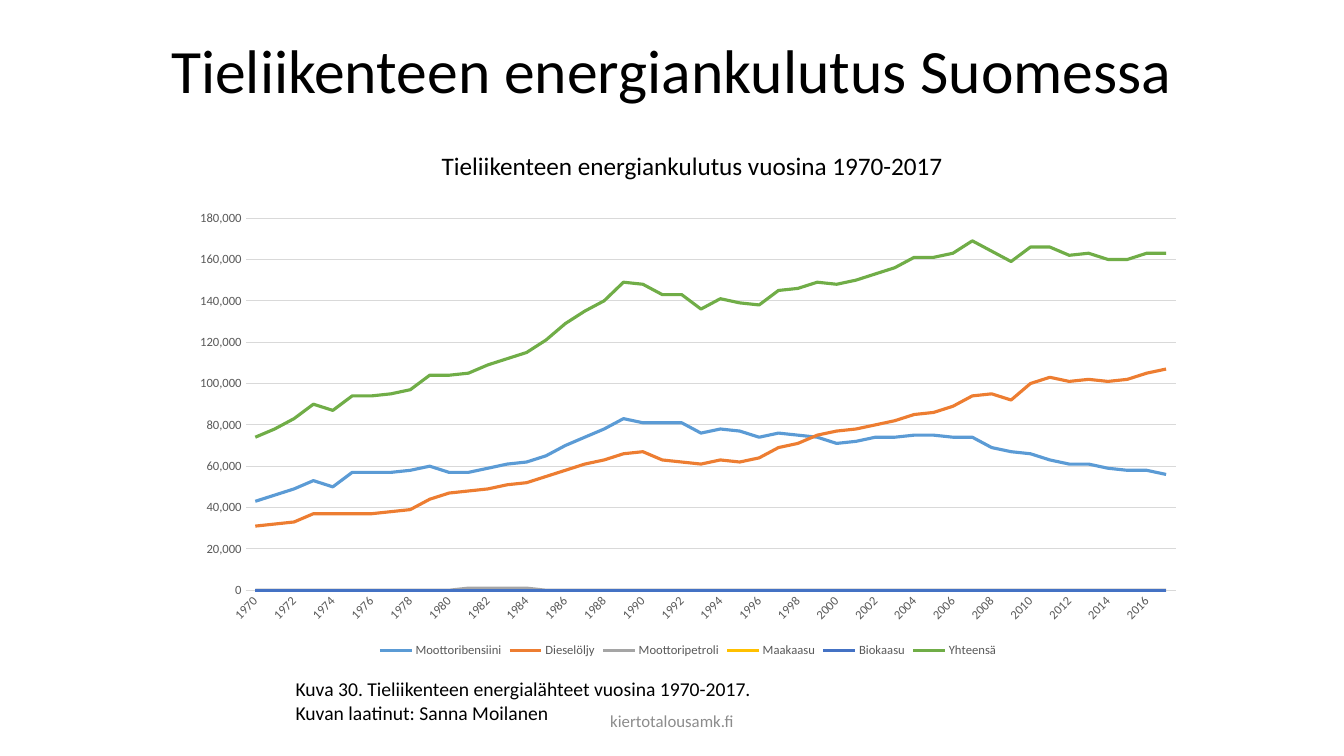
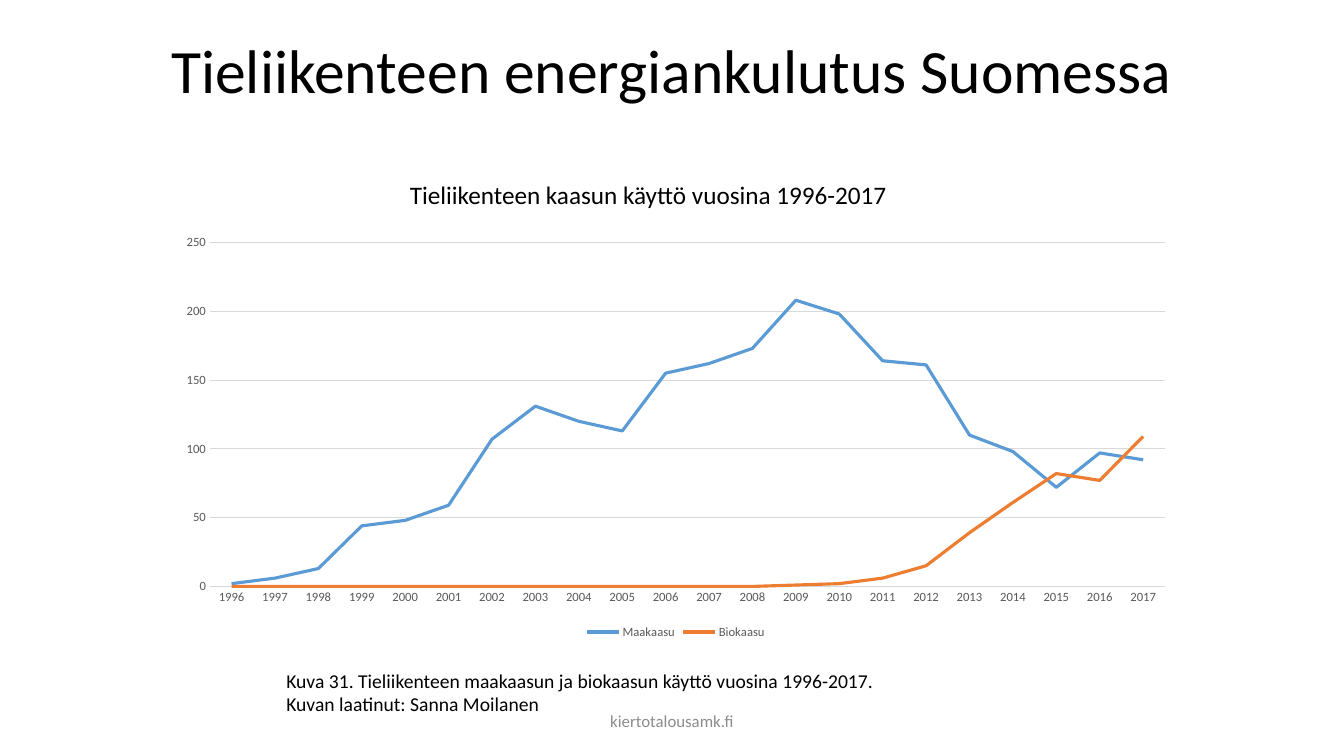
from dataclasses import dataclass

from pptx import Presentation
from pptx import util as u
from pptx.chart import data as cd
from pptx.dml.color import RGBColor
from pptx.enum import chart as ch
from pptx.enum import text as tx


@dataclass(frozen=True)
class Theme:
    font: str = "Calibri"
    ink: str = "000000"
    mute: str = "8C8C8C"
    label: str = "595959"
    rule: str = "D9D9D9"
    blue: str = "5B9BD5"
    orange: str = "ED7D31"
    grey: str = "A5A5A5"
    gold: str = "FFC000"
    navy: str = "4472C4"
    green: str = "70AD47"
    title: int = 44
    head: int = 18
    body: int = 14
    foot: int = 12
    chart: int = 10
    tick: int = 9
    thin: float = 0.75
    thick: float = 2.25

    @property
    def lines(self):
        return (self.blue, self.orange, self.grey, self.gold, self.navy, self.green)


def put(obj, **vals):
    for key, val in vals.items():
        setattr(obj, key, val)


class Deck:
    cols, rows = 160, 90

    def __init__(self, theme):
        self.theme = theme
        self.file = Presentation()
        put(self.file, slide_width=u.Inches(13.33), slide_height=u.Inches(7.5))
        self.page = None

    def box(self, left, top, wide, high):
        x = self.file.slide_width / self.cols
        y = self.file.slide_height / self.rows
        return [u.Emu(round(n)) for n in (left * x, top * y, wide * x, high * y)]

    def style(self, font, size, tint):
        put(font, name=self.theme.font, size=u.Pt(size), bold=False)
        font.color.rgb = RGBColor.from_string(tint)

    def stroke(self, line, tint, size):
        line.color.rgb = RGBColor.from_string(tint)
        line.width = u.Pt(size)

    def fill(self, shape, lines, size, tint, frame, para):
        put(shape.text_frame, word_wrap=True, **frame)
        shape.text_frame.text = "\n".join(lines)
        for item in shape.text_frame.paragraphs:
            put(item, **para)
            self.style(item.font, size, tint)

    def slide(self, name):
        self.page = self.file.slides.add_slide(self.file.slide_layouts[5])
        head = self.page.shapes.title
        spot = self.box(5.5, 0, 149, 17.4)
        put(head, **dict(zip(("left", "top", "width", "height"), spot)))
        mid = {"vertical_anchor": tx.MSO_ANCHOR.MIDDLE}
        para = {"alignment": tx.PP_ALIGN.CENTER}
        self.fill(head, [name], self.theme.title, self.theme.ink,
                  mid | {"auto_size": tx.MSO_AUTO_SIZE.NONE}, para | {"line_spacing": 0.9})
        self.text((53, 83.4, 54, 4.8), ["kiertotalousamk.fi"], self.theme.foot,
                  self.theme.mute, mid, para | {"space_after": u.Pt(6)})

    def text(self, spot, lines, size, tint=None, frame=None, para=None):
        shape = self.page.shapes.add_textbox(*self.box(*spot))
        grow = {"auto_size": tx.MSO_AUTO_SIZE.SHAPE_TO_FIT_TEXT}
        self.fill(shape, lines, size, tint or self.theme.ink, frame or grow, para or {})

    def chart(self, spot, years, rows, top, step):
        look = self.theme
        data = cd.CategoryChartData(number_format="#,##0")
        data.categories = [str(year) for year in years]
        for name, vals in rows.items():
            data.add_series(name, vals)
        chart = self.page.shapes.add_chart(
            ch.XL_CHART_TYPE.LINE, *self.box(*spot), data).chart
        put(chart, has_title=False, has_legend=True)
        self.style(chart.font, look.chart, look.ink)
        put(chart.legend, position=ch.XL_LEGEND_POSITION.BOTTOM, include_in_layout=False)
        self.style(chart.legend.font, look.tick, look.label)
        base, side = chart.category_axis, chart.value_axis
        for axis in (base, side):
            put(axis, major_tick_mark=ch.XL_TICK_MARK.NONE,
                minor_tick_mark=ch.XL_TICK_MARK.NONE)
            self.style(axis.tick_labels.font, look.tick, look.label)
        self.stroke(base.format.line, look.rule, look.thin)
        base._element.txPr.bodyPr.set("rot", "-60000000")
        put(side, minimum_scale=0, maximum_scale=top, major_unit=step,
            has_major_gridlines=True)
        put(side.tick_labels, number_format="#,##0", number_format_is_linked=False)
        side.format.line.fill.background()
        self.stroke(side.major_gridlines.format.line, look.rule, look.thin)
        plot = chart.plots[0]
        plot.vary_by_categories = False
        for row, tint in zip(plot.series, look.lines):
            row.smooth = False
            self.stroke(row.format.line, tint, look.thick)


def kilo(vals):
    return [val * 1000 for val in vals]


FUEL = {
    "Moottoribensiini": kilo([
        43, 46, 49, 53, 50, 57, 57, 57, 58, 60, 57, 57, 59, 61, 62, 65,
        70, 74, 78, 83, 81, 81, 81, 76, 78, 77, 74, 76, 75, 74, 71, 72,
        74, 74, 75, 75, 74, 74, 69, 67, 66, 63, 61, 61, 59, 58, 58, 56]),
    "Dieselöljy": kilo([
        31, 32, 33, 37, 37, 37, 37, 38, 39, 44, 47, 48, 49, 51, 52, 55,
        58, 61, 63, 66, 67, 63, 62, 61, 63, 62, 64, 69, 71, 75, 77, 78,
        80, 82, 85, 86, 89, 94, 95, 92, 100, 103, 101, 102, 101, 102, 105, 107]),
    "Moottoripetroli": kilo([0] * 11 + [1] * 4 + [0] * 33),
    "Maakaasu": [0] * 48,
    "Biokaasu": [0] * 48,
    "Yhteensä": kilo([
        74, 78, 83, 90, 87, 94, 94, 95, 97, 104, 104, 105, 109, 112, 115, 121,
        129, 135, 140, 149, 148, 143, 143, 136, 141, 139, 138, 145, 146, 149, 148, 150,
        153, 156, 161, 161, 163, 169, 164, 159, 166, 166, 162, 163, 160, 160, 163, 163]),
}
GAS = {
    "Maakaasu": [2, 6, 13, 44, 48, 59, 107, 131, 120, 113, 155,
                 162, 173, 208, 198, 164, 161, 110, 98, 72, 97, 92],
    "Biokaasu": [0] * 13 + [1, 2, 6, 15, 39, 61, 82, 77, 109],
}
PAGES = [
    {"head": "Tieliikenteen energiankulutus vuosina 1970-2017",
     "note": "Kuva 30. Tieliikenteen energialähteet vuosina 1970-2017.",
     "years": range(1970, 2018), "rows": FUEL, "top": 180000, "step": 20000,
     "spots": [(51.4, 17.3, 108, 4.8), (21.4, 24, 121, 54.8), (34, 80, 99.6, 6.8)]},
    {"head": "Tieliikenteen kaasun käyttö vuosina 1996-2017",
     "note": "Kuva 31. Tieliikenteen maakaasun ja biokaasun käyttö vuosina 1996-2017.",
     "years": range(1996, 2018), "rows": GAS, "top": 250, "step": 50,
     "spots": [(47.6, 20.8, 112, 4.8), (19.8, 27, 121.3, 49.6), (32.9, 79, 99.6, 6.8)]},
]


def main():
    look = Theme()
    deck = Deck(look)
    for page in PAGES:
        head, plot, note = page["spots"]
        deck.slide("Tieliikenteen energiankulutus Suomessa")
        deck.chart(plot, page["years"], page["rows"], page["top"], page["step"])
        deck.text(head, [page["head"]], look.head)
        deck.text(note, [page["note"], "Kuvan laatinut: Sanna Moilanen"], look.body)
    deck.file.save("out.pptx")


if __name__ == "__main__":
    main()
